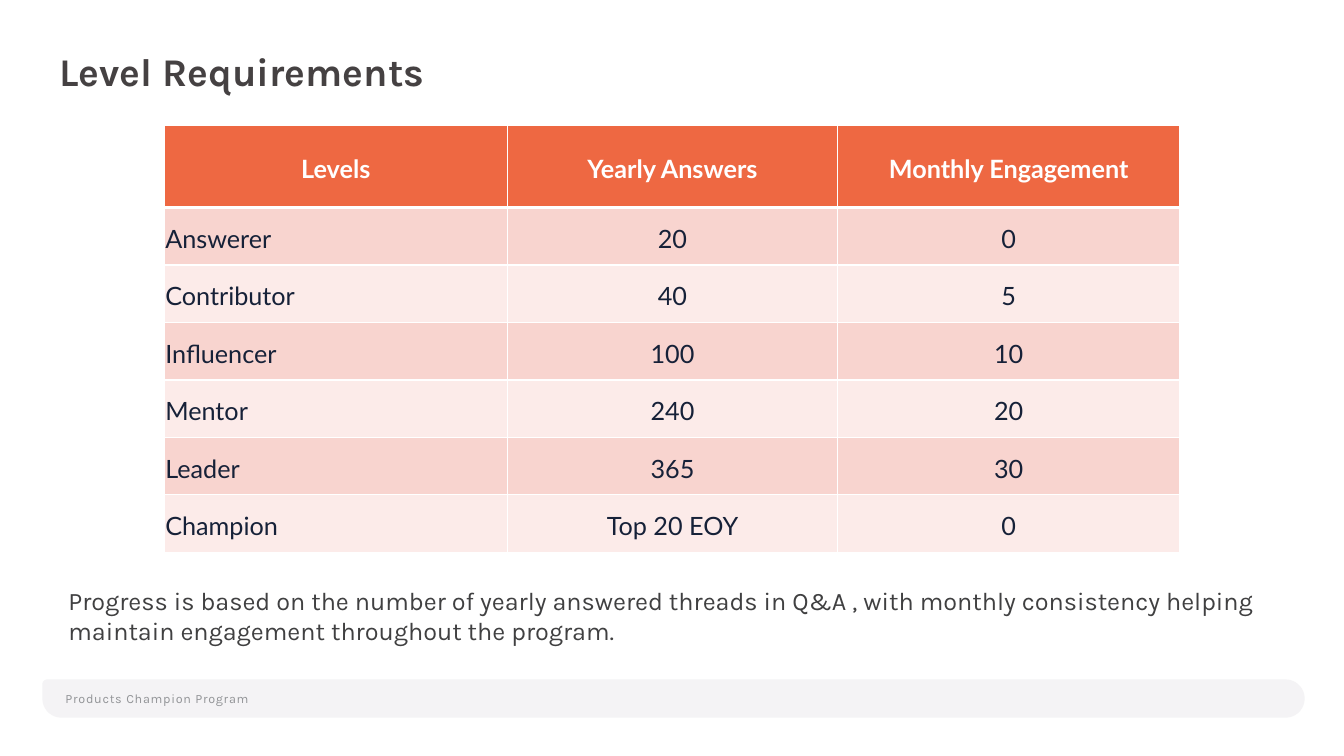
"""Build the Level Requirements slide."""
import math
import lxml.etree
import pptx
import pptx.dml.color
import pptx.enum.text
import pptx.oxml.ns
import pptx.util

Inches = pptx.util.Inches
Pt = pptx.util.Pt
ALIGN = pptx.enum.text.PP_ALIGN
ANCHOR = pptx.enum.text.MSO_ANCHOR

TITLE = "Level Requirements"
NOTE = ("Progress is based on the number of yearly answered threads in Q&A , "
        "with monthly consistency helping maintain engagement throughout the program.")
FOOTER = "Products Champion Program"
ROWS = [
    ("Levels", "Yearly Answers", "Monthly Engagement"),
    ("Answerer", "20", "0"),
    ("Contributor", "40", "5"),
    ("Influencer", "100", "10"),
    ("Mentor", "240", "20"),
    ("Leader", "365", "30"),
    ("Champion", "Top 20 EOY", "0"),
]
WIDTHS = (3.4, 3.28, 3.39)
HEAD, ROW = 0.82, 0.57
BAR = (0.42, 6.74, 12.52, 0.38)
COLORS = {
    "head": "EE6842", "odd": "F8D4CF", "even": "FCEBE9", "white": "FFFFFF",
    "cell": "162138", "title": "454142", "note": "404041",
    "bar": "F4F3F5", "footer": "929497",
}


def color(name):
    return pptx.dml.color.RGBColor.from_string(COLORS[name])


def write(frame, text, size, ink, font="Karla", bold=False, align=ALIGN.LEFT,
          line=None, after=None, track=None):
    frame.word_wrap = True
    para = frame.paragraphs[0]
    para.alignment = align
    para.space_before = Pt(0)
    if line:
        para.line_spacing = line
    if after:
        para.space_after = Pt(after)
    run = para.add_run()
    run.text = text
    run.font.name = font
    run.font.size = Pt(size)
    run.font.bold = bold
    run.font.color.rgb = color(ink)
    if track:
        run.font._element.set("spc", str(int(track * 100)))


def place(shape, left, top, width, height):
    shape.left, shape.top = Inches(left), Inches(top)
    shape.width, shape.height = Inches(width), Inches(height)


def inset(frame):
    frame.margin_left = frame.margin_top = Inches(0.01)
    frame.margin_right = frame.margin_bottom = 0
    frame.vertical_anchor = ANCHOR.TOP
    frame.auto_size = pptx.enum.text.MSO_AUTO_SIZE.NONE


def edge(cell, side, width):
    qn = pptx.oxml.ns.qn
    line = lxml.etree.SubElement(cell._tc.get_or_add_tcPr(), qn("a:" + side),
                                 w=str(Pt(width)))
    fill = lxml.etree.SubElement(line, qn("a:solidFill"))
    lxml.etree.SubElement(fill, qn("a:srgbClr"), val=COLORS["white"])


def add_bar(slide):
    left, top, width, height = BAR
    right, base, round_end, small = left + width, top + height, height / 2, 0.05
    corners = [
        (right - round_end, top + round_end, round_end, -90),
        (right - round_end, base - round_end, round_end, 0),
        (left + round_end, base - round_end, round_end, 90),
        (left + small, top + small, small, 180),
    ]
    points = []
    for mid_x, mid_y, radius, start in corners:
        for step in range(0, 91, 10):
            angle = math.radians(start + step)
            points.append((Inches(mid_x + radius * math.cos(angle)),
                           Inches(mid_y + radius * math.sin(angle))))
    form = slide.shapes.build_freeform(*points[0])
    form.add_line_segments(points[1:], close=True)
    bar = form.convert_to_shape()
    bar.shadow.inherit = False
    bar.fill.solid()
    bar.fill.fore_color.rgb = color("bar")
    bar.line.fill.background()


def add_levels(slide):
    high = HEAD + ROW * (len(ROWS) - 1)
    table = slide.shapes.add_table(
        len(ROWS), len(WIDTHS), Inches(1.63), Inches(1.24),
        Inches(sum(WIDTHS)), Inches(high)).table
    for col, width in zip(table.columns, WIDTHS):
        col.width = Inches(width)
    for r, row in enumerate(ROWS):
        head = r == 0
        table.rows[r].height = Inches(HEAD if head else ROW)
        for c, text in enumerate(row):
            cell = table.cell(r, c)
            cell.margin_left = cell.margin_right = Inches(0.01)
            cell.margin_top = cell.margin_bottom = Inches(0.01)
            cell.vertical_anchor = ANCHOR.MIDDLE
            edge(cell, "lnL", 1)
            edge(cell, "lnR", 1)
            edge(cell, "lnT", 3 if r == 1 else 1)
            edge(cell, "lnB", 3 if head else 1)
            cell.fill.solid()
            cell.fill.fore_color.rgb = color(
                "head" if head else "odd" if r % 2 else "even")
            write(cell.text_frame, text, 18, "white" if head else "cell",
                  font="Lato", bold=head, line=1.15, after=8,
                  align=ALIGN.CENTER if head or c else ALIGN.LEFT)


def add_text(slide, left, top, width, height):
    return slide.shapes.add_textbox(
        Inches(left), Inches(top), Inches(width), Inches(height)).text_frame


def main():
    deck = pptx.Presentation()
    deck.slide_width, deck.slide_height = Inches(13.33), Inches(7.5)
    slide = deck.slides.add_slide(deck.slide_layouts[5])
    add_bar(slide)
    footer = add_text(slide, 0.64, 6.84, 2.53, 0.17)
    inset(footer)
    write(footer, FOOTER, 9, "footer", track=0.5)
    title = slide.shapes.title
    place(title, 0.58, 0.43, 5.63, 0.48)
    inset(title.text_frame)
    write(title.text_frame, TITLE, 28, "title", bold=True, line=1.07)
    add_levels(slide)
    note = add_text(slide, 0.58, 5.76, 12.33, 0.71)
    write(note, NOTE, 18, "note")
    deck.save("out.pptx")


if __name__ == "__main__":
    main()
